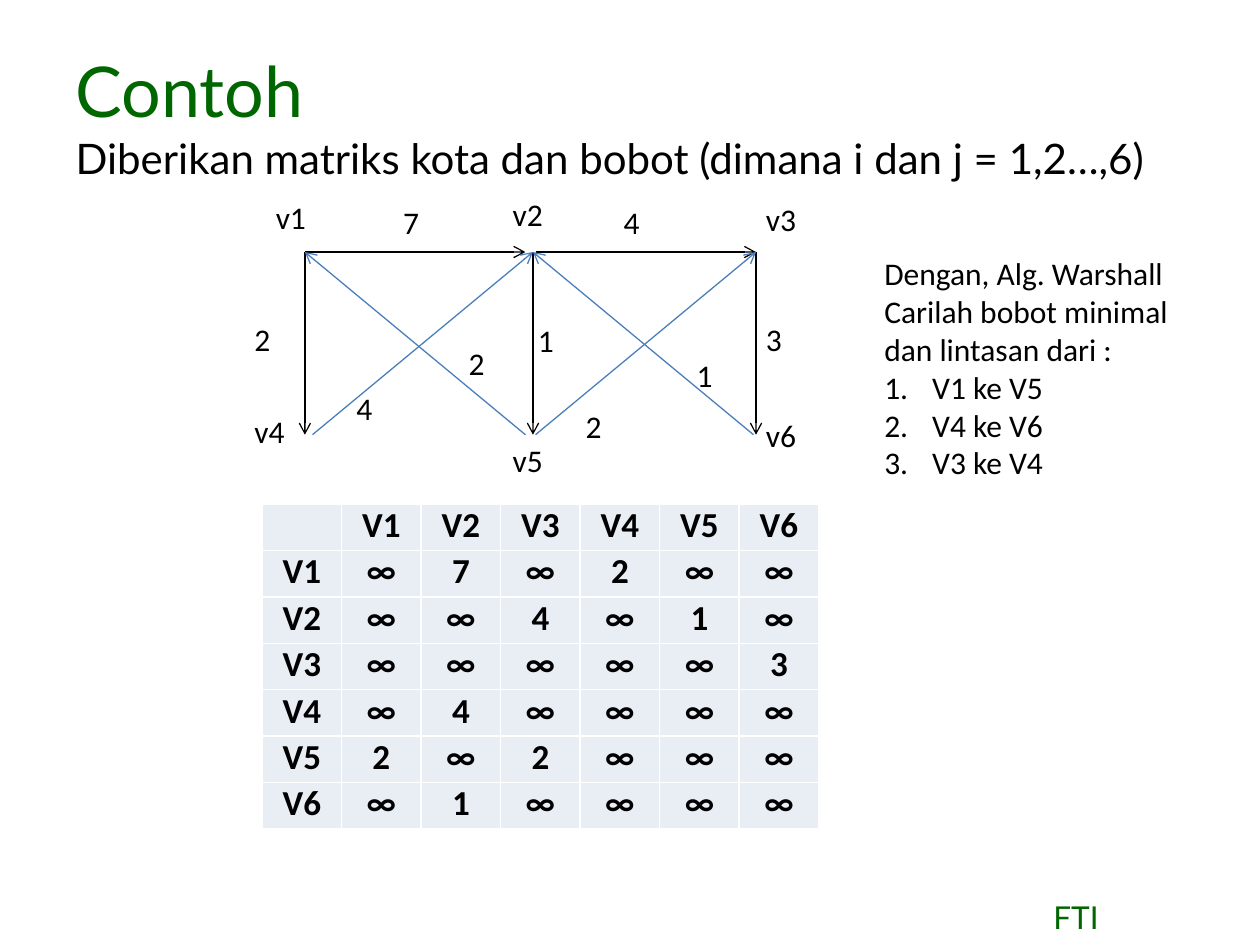
"""Build the slide with the weighted city graph and its weight matrix."""
from lxml.etree import SubElement
from pptx import Presentation
from pptx.dml.color import RGBColor
from pptx.enum.shapes import MSO_CONNECTOR as Connector
from pptx.enum.text import MSO_ANCHOR as Anchor, MSO_AUTO_SIZE as AutoSize, PP_ALIGN as Align
from pptx.oxml.ns import qn
from pptx.util import Inches, Pt

BLACK = RGBColor(0x00, 0x00, 0x00)
WHITE = RGBColor(0xFF, 0xFF, 0xFF)
GREEN = RGBColor(0x00, 0x66, 0x00)
BLUE = RGBColor(0x4B, 0x7E, 0xBC)
CELL_FILL = RGBColor(0xE9, 0xED, 0xF4)
INFINITY = "∞"

TOP, BOTTOM = 2, 3.45
CITY_LABELS = {
    "v1": (2.09, 1.52), "v4": (1.92, 3.22), "v2": (3.97, 1.5),
    "v3": (5.98, 1.54), "v6": (5.98, 3.25), "v5": (3.97, 3.45),
}
# from city, to city, weight, start, end, colour, label position
EDGES = [
    (1, 2, 7, (2.42, TOP), (4.17, TOP), BLACK, (3.1, 1.56)),
    (2, 3, 4, (4.25, TOP), (6, TOP), BLACK, (4.85, 1.56)),
    (1, 4, 2, (2.42, TOP), (2.42, BOTTOM), BLACK, (1.92, 2.49)),
    (2, 5, 1, (4.23, TOP), (4.23, BOTTOM), BLACK, (4.17, 2.5)),
    (3, 6, 3, (6, TOP), (6, BOTTOM), BLACK, (5.98, 2.49)),
    (4, 2, 4, (2.48, BOTTOM), (4.23, TOP), BLUE, (2.73, 3.04)),
    (5, 3, 2, (4.25, BOTTOM), (6, TOP), BLUE, (4.55, 3.18)),
    (5, 1, 2, (4.17, BOTTOM), (2.42, TOP), BLUE, (3.62, 2.68)),
    (6, 2, 1, (5.98, BOTTOM), (4.23, TOP), BLUE, (5.43, 2.78)),
]
NOTE = ["Dengan, Alg. Warshall", "Carilah bobot minimal", "dan lintasan dari :"]
TASKS = ["V1 ke V5", "V4 ke V6", "V3 ke V4"]


def add_run(paragraph, text, size, colour=BLACK, name="Calibri", bold=False):
    """Add one formatted run to a paragraph."""
    run = paragraph.add_run()
    run.text = text
    run.font.size = Pt(size)
    run.font.name = name
    run.font.bold = bold
    run.font.color.rgb = colour


def fill_placeholder(shape, text, box, size, colour, align=Align.LEFT, anchor=Anchor.TOP):
    """Move a placeholder and give it one unbulleted line."""
    shape.left, shape.top, shape.width, shape.height = map(Inches, box)
    frame = shape.text_frame
    frame.auto_size = AutoSize.NONE
    frame.vertical_anchor = anchor
    paragraph = frame.paragraphs[0]
    paragraph.alignment = align
    paragraph.space_before = Pt(0)
    properties = paragraph._p.get_or_add_pPr()
    properties.set("marL", "0")
    properties.set("indent", "0")
    SubElement(properties, qn("a:buNone"))
    add_run(paragraph, text, size, colour, "Lato")


def add_label(shapes, lines, position, size):
    """Add an unwrapped text box and return its paragraphs."""
    frame = shapes.add_textbox(*map(Inches, (*position, *size))).text_frame
    frame.word_wrap = False
    frame.auto_size = AutoSize.SHAPE_TO_FIT_TEXT
    for index, line in enumerate(lines):
        paragraph = frame.add_paragraph() if index else frame.paragraphs[0]
        add_run(paragraph, line, 18)
    return frame.paragraphs


def add_arrow(shapes, start, end, colour):
    """Add a thin line with an open arrowhead at its end."""
    arrow = shapes.add_connector(Connector.STRAIGHT, *map(Inches, (*start, *end)))
    arrow.line.color.rgb = colour
    arrow.line.width = Pt(0.75)
    SubElement(arrow.line._get_or_add_ln(), qn("a:tailEnd"), type="arrow")
    SubElement(arrow._element.spPr, qn("a:effectLst"))


def add_graph(slide):
    """Draw the cities and weighted edges as one group."""
    shapes = slide.shapes.add_group_shape().shapes
    for _, _, _, start, end, colour, _ in EDGES:
        add_arrow(shapes, start, end, colour)
    for city, position in CITY_LABELS.items():
        add_label(shapes, [city], position, (0.52, 0.47))
    for _, _, weight, _, _, _, position in EDGES:
        add_label(shapes, [str(weight)], position, (0.38, 0.47))


def format_cell(cell, text):
    """Fill, border and label one matrix cell."""
    cell.margin_left = cell.margin_right = Inches(0.07)
    cell.margin_top = cell.margin_bottom = 0
    properties = cell._tc.get_or_add_tcPr()
    for side in ("lnL", "lnR", "lnT", "lnB"):
        border = SubElement(properties, qn(f"a:{side}"), w=str(Pt(1)))
        fill = SubElement(border, qn("a:solidFill"))
        SubElement(fill, qn("a:srgbClr"), val=str(WHITE))
    cell.fill.solid()
    cell.fill.fore_color.rgb = CELL_FILL
    if text:
        paragraph = cell.text_frame.paragraphs[0]
        paragraph.alignment = Align.CENTER
        add_run(paragraph, text, 20, bold=True)


def add_matrix(slide):
    """Add the weight matrix derived from the edges."""
    weights = {(origin, target): str(weight) for origin, target, weight, *_ in EDGES}
    cities = range(1, 7)
    names = [f"V{city}" for city in cities]
    rows = [["", *names]]
    for origin, name in zip(cities, names):
        rows.append([name, *(weights.get((origin, target), INFINITY) for target in cities)])
    box = map(Inches, (2.08, 4, 4.42, 2.58))
    table = slide.shapes.add_table(len(rows), len(rows), *box).table
    for row_index, row in enumerate(rows):
        for column_index, text in enumerate(row):
            format_cell(table.cell(row_index, column_index), text)


def add_note(slide):
    """Add the assignment with its numbered tasks."""
    paragraphs = add_label(slide.shapes, NOTE + TASKS, (6.92, 1.97), (2.54, 1.92))
    for paragraph in paragraphs[len(NOTE):]:
        properties = paragraph._p.get_or_add_pPr()
        properties.set("marL", str(Inches(0.38)))
        properties.set("indent", str(-Inches(0.38)))
        SubElement(properties, qn("a:buFont"), typeface="+mj-lt")
        SubElement(properties, qn("a:buAutoNum"), type="arabicPeriod")


def main():
    """Build and save the presentation."""
    presentation = Presentation()
    presentation.slide_width, presentation.slide_height = Inches(10), Inches(7.5)
    slide = presentation.slides.add_slide(presentation.slide_layouts[3])
    title, body, footer = slide.placeholders
    fill_placeholder(title, "Contoh", (0.5, 0.42, 2.88, 0.67), 40, GREEN, anchor=Anchor.BOTTOM)
    fill_placeholder(body, "Diberikan matriks kota dan bobot (dimana i dan j = 1,2…,6)",
                     (0.5, 1, 9, 5.08), 24, BLACK)
    fill_placeholder(footer, "FTI", (7.58, 7.08, 1.92, 0.42), 18, GREEN, Align.CENTER)
    add_matrix(slide)
    add_graph(slide)
    add_note(slide)
    presentation.save("out.pptx")


if __name__ == "__main__":
    main()
